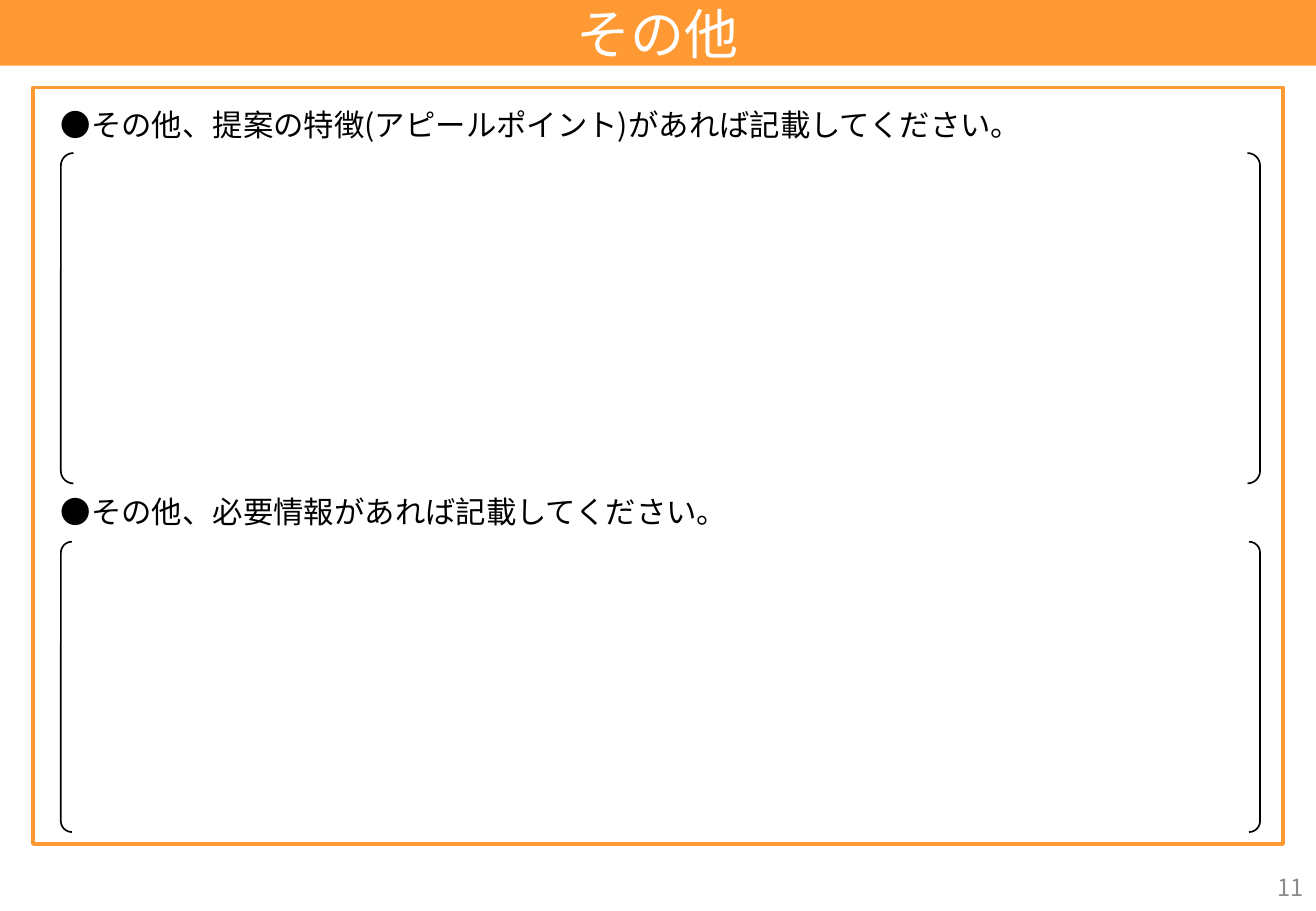
from pptx import Presentation
from pptx.dml.color import RGBColor
from pptx.enum.shapes import MSO_SHAPE as Shape
from pptx.enum.text import MSO_ANCHOR as Anchor, PP_ALIGN as Align
from pptx.oxml.ns import qn
from pptx.util import Inches, Pt
from lxml.etree import SubElement

ORANGE = RGBColor(0xFF, 0x99, 0x33)
WHITE = RGBColor(0xFF, 0xFF, 0xFF)
BLACK = RGBColor(0, 0, 0)
GRAY = RGBColor(0x8C, 0x8C, 0x8C)

COLUMNS, ROWS = 40, 30
CONTENT_LEFT, CONTENT_WIDTH = 1.85, 36.45
HEADER_HEIGHT = 2.16


class FormSlide:
    """One slide; every place is (left, top, width, height) in grid columns and rows."""

    font_name = "Noto Sans CJK JP"

    def __init__(self, deck):
        self.column = deck.slide_width / COLUMNS
        self.row = deck.slide_height / ROWS
        self.shapes = deck.slides.add_slide(deck.slide_layouts[6]).shapes

    def on_grid(self, place):
        left, top, width, height = place
        return (round(left * self.column), round(top * self.row),
                round(width * self.column), round(height * self.row))

    def shape(self, kind, place, fill=None, line=None, line_width=1):
        shape = self.shapes.add_shape(kind, *self.on_grid(place))
        shape.shadow.inherit = False
        if fill is None:
            shape.fill.background()
        else:
            shape.fill.solid()
            shape.fill.fore_color.rgb = fill
        if line is None:
            shape.line.fill.background()
        else:
            shape.line.color.rgb = line
            shape.line.width = Pt(line_width)
        return shape

    def bracket(self, place):
        self.shape(Shape.DOUBLE_BRACKET, place, line=BLACK).adjustments[0] = 0.038

    def text(self, wording, place, size, color, align=Align.LEFT,
             anchor=Anchor.TOP, side_inset=0):
        frame = self.shapes.add_textbox(*self.on_grid(place)).text_frame
        frame.word_wrap = True
        frame.vertical_anchor = anchor
        frame.margin_top = frame.margin_bottom = 0
        frame.margin_left = frame.margin_right = Inches(side_inset)
        paragraph = frame.paragraphs[0]
        paragraph.text = wording
        paragraph.alignment = align
        font = paragraph.font
        font.name = self.font_name
        font.size = Pt(size)
        font.color.rgb = color
        defaults = paragraph._p.pPr.find(qn("a:defRPr"))
        SubElement(defaults, qn("a:ea"), typeface=self.font_name)

    def question(self, wording, top, answer_top, answer_height):
        """A prompt with the bracketed answer space below it."""
        self.text(wording, (CONTENT_LEFT, top, CONTENT_WIDTH, 1.2), 18, BLACK)
        self.bracket((CONTENT_LEFT, answer_top, CONTENT_WIDTH, answer_height))


def main():
    deck = Presentation()
    deck.slide_width, deck.slide_height = Inches(10.83), Inches(7.5)
    slide = FormSlide(deck)

    header = (0, 0, COLUMNS, HEADER_HEIGHT)
    slide.shape(Shape.RECTANGLE, header, fill=ORANGE)
    slide.text("その他", header, 32, WHITE, Align.CENTER, Anchor.MIDDLE)
    slide.text("11", (31, 28.4, 9, 1.6), 14, GRAY, Align.RIGHT, Anchor.MIDDLE,
               side_inset=0.1)

    slide.shape(Shape.RECTANGLE, (1, 2.88, COLUMNS - 2, 24.92),
                line=ORANGE, line_width=2)
    slide.question("●その他、提案の特徴(アピールポイント)があれば記載してください。",
                   3.48, 5.04, 10.88)
    slide.question("●その他、必要情報があれば記載してください。",
                   16.24, 17.84, 9.56)

    deck.save("out.pptx")


if __name__ == "__main__":
    main()
